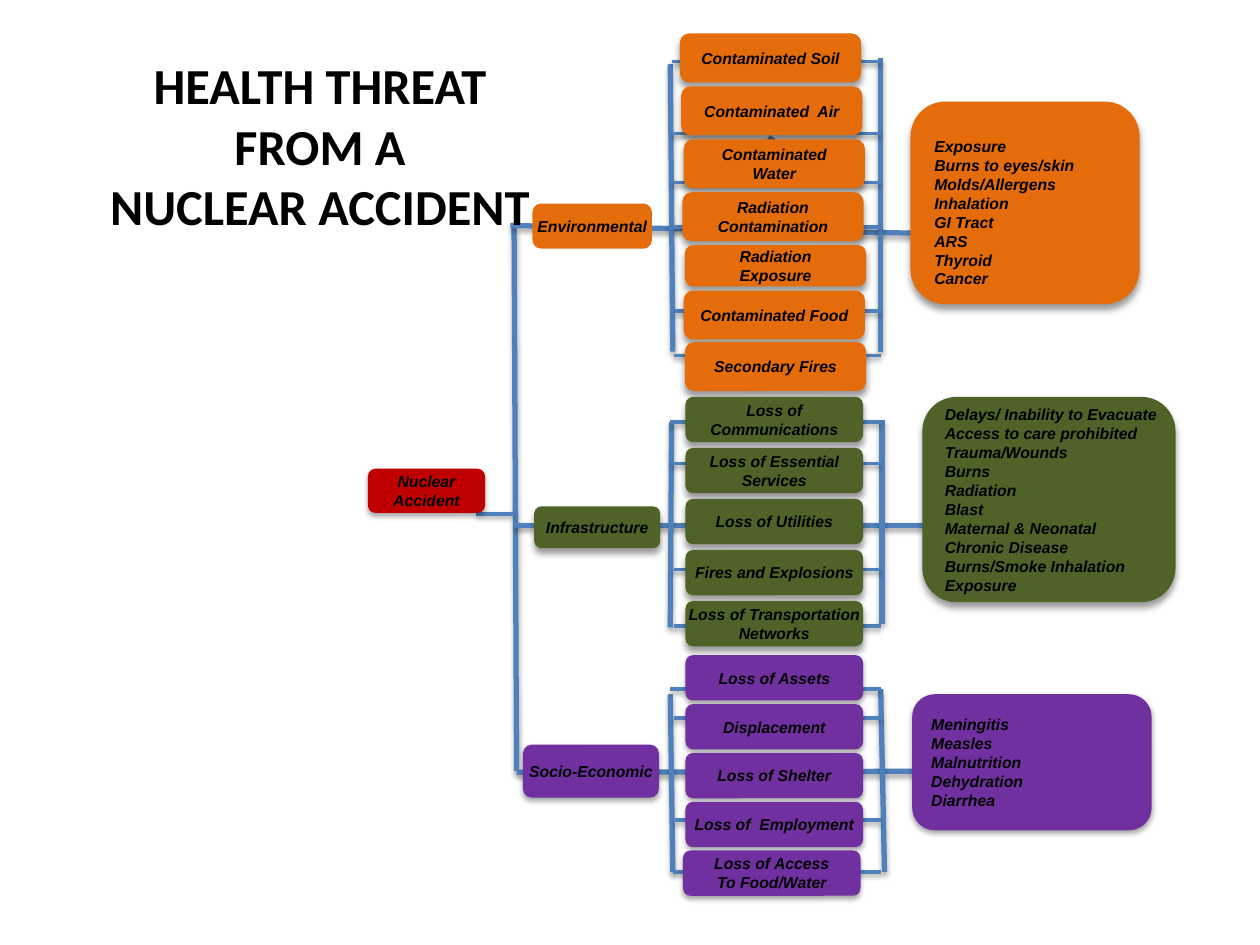
from lxml.etree import SubElement
from pptx import Presentation
from pptx.dml.color import RGBColor as RGB
from pptx.enum.shapes import MSO_CONNECTOR as LINE, MSO_SHAPE as SHAPE
from pptx.enum.text import MSO_ANCHOR as ANCHOR, PP_ALIGN as ALIGN
from pptx.oxml.ns import qn
from pptx.util import Inches, Pt

THEME = {
    "orange": "E46C0A", "green": "4F6228", "purple": "7030A0", "red": "C00000",
    "line": "4F81BD", "text": "000000",
    "font": "Arial", "size": 9, "title_font": "Calibri", "title_size": 28.8,
    "deep": (40, 4, 3), "soft": (35, 3.1, 1.8), "thin": (38, 3.1, 1.6),
}
THIN, THICK = 2, 3
CAUSE_W, CAUSE_H, TIE_END = 1.41, 0.36, 6.99

TITLE = ["HEALTH THREAT", "FROM A", "NUCLEAR ACCIDENT"]
ROOT = (["Nuclear", "Accident"], (2.92, 3.72, 0.93, 0.35))
TRUNK = [
    ((4.08, 1.8), (4.1, 6.12), THICK),
    ((6.14, 1.12), (6.1, 1.09), THICK),
    ((3.78, 4.08), (4.08, 4.08), THIN),
]
BRANCHES = [
    {
        "name": "Environmental", "box": (4.24, 1.63, 0.92, 0.33),
        "color": "orange", "shadow": "deep", "name_shadow": None, "outline": True,
        "stem": ((4.05, 1.79), (7.23, 1.85)),
        "spines": [((5.32, 0.51), (5.34, 2.79)), ((6.99, 0.46), (6.99, 2.79))],
        "ties": [(5.33, 0.49), (5.33, 1.06), (5.34, 1.45), (5.34, 1.8),
                 (5.36, 2.47), (5.35, 2.82)],
        "causes": [["Contaminated Soil"], ["Contaminated  Air"],
                   ["Contaminated", "Water"], ["Radiation", "Contamination"],
                   ["Radiation", "Exposure"], ["Contaminated Food"],
                   ["Secondary Fires"]],
        "top": 0.28, "pitch": 0.42,
        "moved": {0: (5.41, 0.28, 0.36), 1: (5.42, 0.7, 0.36),
                  3: (5.43, 1.54, 0.36), 4: (5.45, 1.96, 0.3),
                  5: (5.44, 2.32, 0.36), 6: (5.45, 2.73, 0.36)},
        "panel": (7.24, 0.82, 1.79, 1.58), "panel_inset": 0.2,
        "effects": ["Exposure", "Burns to eyes/skin", "Molds/Allergens",
                    "Inhalation", "GI Tract", "ARS", "Thyroid", "Cancer"],
    },
    {
        "name": "Infrastructure", "box": (4.24, 4.02, 1, 0.33),
        "color": "green", "shadow": "deep", "name_shadow": "deep", "outline": False,
        "stem": ((4.08, 4.17), (7.53, 4.17)),
        "spines": [((5.33, 3.35), (5.32, 4.98)), ((7, 3.33), (7, 4.95))],
        "ties": [(5.32, 3.35), (5.33, 3.68), (5.35, 4.52), (5.35, 4.97)],
        "causes": [["Loss of", "Communications"], ["Loss of Essential", "Services"],
                   ["Loss of Utilities"], ["Fires and Explosions"],
                   ["Loss of Transportation", "Networks"]],
        "top": 3.15, "pitch": 0.405, "moved": {},
        "panel": (7.32, 3.15, 2.01, 1.63), "panel_inset": 0.05,
        "effects": ["Delays/ Inability to Evacuate", "Access to care prohibited",
                    "Trauma/Wounds", "Burns", "Radiation", "Blast",
                    "Maternal & Neonatal", "Chronic Disease",
                    "Burns/Smoke Inhalation", "Exposure"],
    },
    {
        "name": "Socio-Economic", "box": (4.15, 5.91, 1.08, 0.42),
        "color": "purple", "shadow": "soft", "name_shadow": "soft", "outline": False,
        "stem": ((4.1, 6.13), (7.79, 6.12)),
        "spines": [((5.32, 5.51), (5.34, 6.92)), ((6.99, 5.47), (7.02, 6.92))],
        "ties": [(5.32, 5.47), (5.35, 5.7), (5.36, 6.51), (5.34, 6.92)],
        "causes": [["Loss of Assets"], ["Displacement"], ["Loss of Shelter"],
                   ["Loss of  Employment"], ["Loss of Access", "To Food/Water"]],
        "top": 5.2, "pitch": 0.388, "moved": {4: (5.42, 6.75, 0.36)},
        "panel": (7.24, 5.51, 1.9, 1.08), "panel_inset": 0.05,
        "effects": ["Meningitis", "Measles", "Malnutrition", "Dehydration",
                    "Diarrhea"],
    },
]


def color(key):
    return RGB.from_string(THEME[key])


def set_shadow(sp, key):
    effects = SubElement(sp._element.spPr, qn("a:effectLst"))
    if key:
        alpha, blur, dist = THEME[key]
        shadow = SubElement(effects, qn("a:outerShdw"), blurRad=str(Pt(blur)),
                            dist=str(Pt(dist)), dir="5400000", rotWithShape="0")
        clr = SubElement(shadow, qn("a:srgbClr"), val=THEME["text"])
        SubElement(clr, qn("a:alpha"), val=str(alpha * 1000))


def write(tf, lines, align, font, size, italic):
    tf.vertical_anchor = ANCHOR.MIDDLE
    for i, line in enumerate(lines):
        p = tf.paragraphs[0] if i == 0 else tf.add_paragraph()
        p.text, p.alignment = line, align
        f = p.font
        f.name, f.size, f.bold, f.italic = font, Pt(size), True, italic
        f.color.rgb = color("text")


def add_line(s, start, end, width):
    sp = s.shapes.add_connector(LINE.STRAIGHT, *map(Inches, start + end))
    sp.line.color.rgb = color("line")
    sp.line.width = Pt(width)
    set_shadow(sp, "thin" if width == THIN else "soft")


def add_box(s, lines, at, fill, shadow, outline=False, align=ALIGN.CENTER, inset=0.05):
    sp = s.shapes.add_shape(SHAPE.ROUNDED_RECTANGLE, *map(Inches, at))
    sp.fill.solid()
    sp.fill.fore_color.rgb = color(fill)
    if outline:
        sp.line.color.rgb = color(fill)
        sp.line.width = Pt(2)
    else:
        sp.line.fill.background()
    set_shadow(sp, shadow)
    tf = sp.text_frame
    tf.word_wrap = False
    tf.margin_top = Inches(inset)
    write(tf, lines, align, THEME["font"], THEME["size"], True)


def add_links(s, branch):
    add_line(s, *branch["stem"], THICK)
    for start, end in branch["spines"]:
        add_line(s, start, end, THICK)
    for x, y in branch["ties"]:
        add_line(s, (x, y), (TIE_END, y), THIN)


def add_branch(s, branch):
    fill, shadow, outline = branch["color"], branch["shadow"], branch["outline"]
    add_box(s, branch["effects"], branch["panel"], fill, shadow, outline,
            ALIGN.LEFT, branch["panel_inset"])
    add_box(s, [branch["name"]], branch["box"], fill, branch["name_shadow"], outline)
    for i, lines in enumerate(branch["causes"]):
        place = (5.44, branch["top"] + i * branch["pitch"], CAUSE_H)
        x, y, h = branch["moved"].get(i, place)
        add_box(s, lines, (x, y, CAUSE_W, h), fill, shadow, outline)


def main():
    """Build the nuclear accident health threat slide."""
    prs = Presentation()
    prs.slide_width, prs.slide_height = Inches(10), Inches(7.5)
    s = prs.slides.add_slide(prs.slide_layouts[6])
    for start, end, width in TRUNK:
        add_line(s, start, end, width)
    for branch in BRANCHES:
        add_links(s, branch)
    for branch in BRANCHES:
        add_branch(s, branch)
    add_box(s, *ROOT, "red", "soft")
    tf = s.shapes.add_textbox(*map(Inches, (0, 0.83, 5.08, 1.25))).text_frame
    tf.word_wrap = True
    tf.margin_bottom = Inches(0.66)
    write(tf, TITLE, ALIGN.CENTER, THEME["title_font"], THEME["title_size"], False)
    prs.save("out.pptx")


if __name__ == "__main__":
    main()
